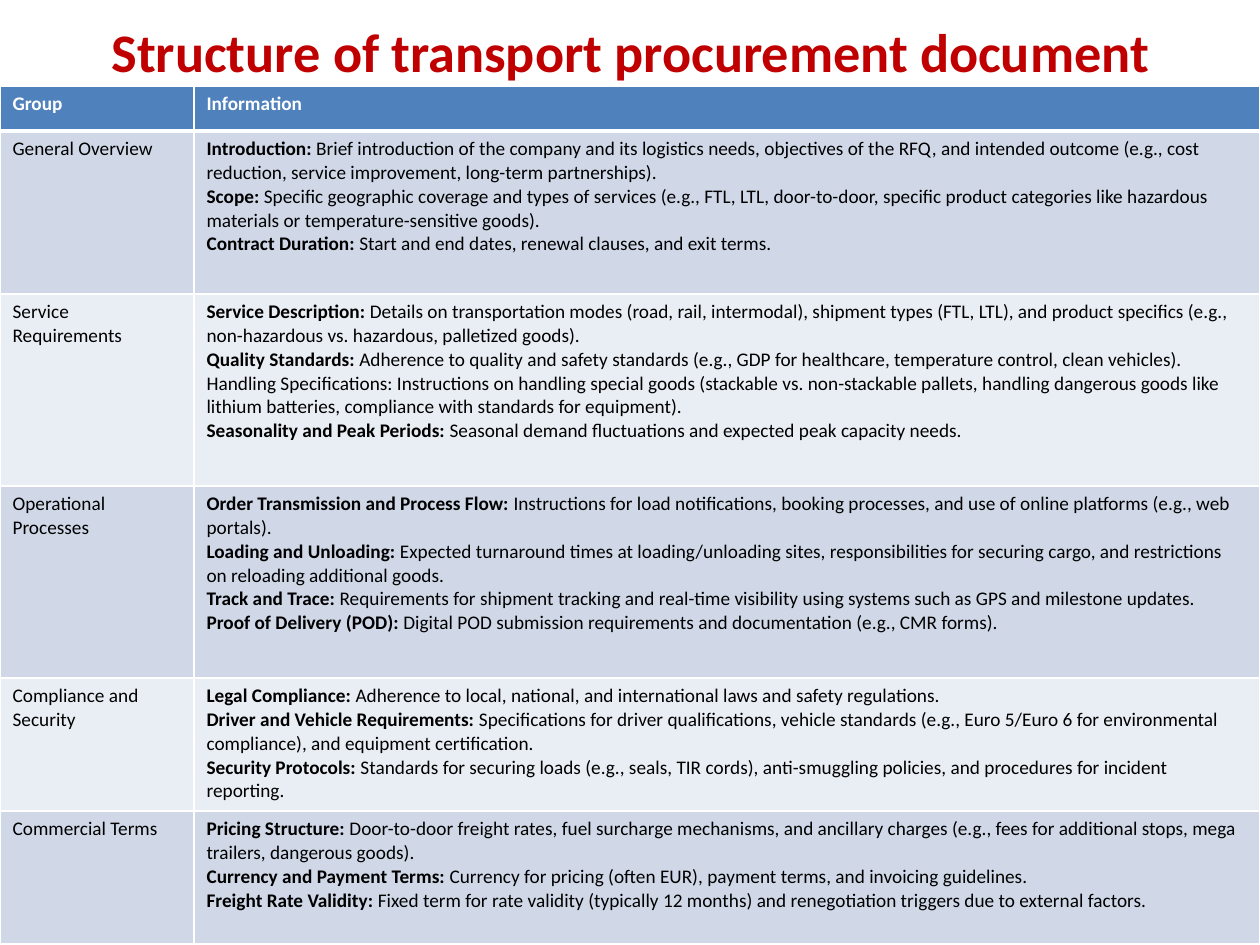
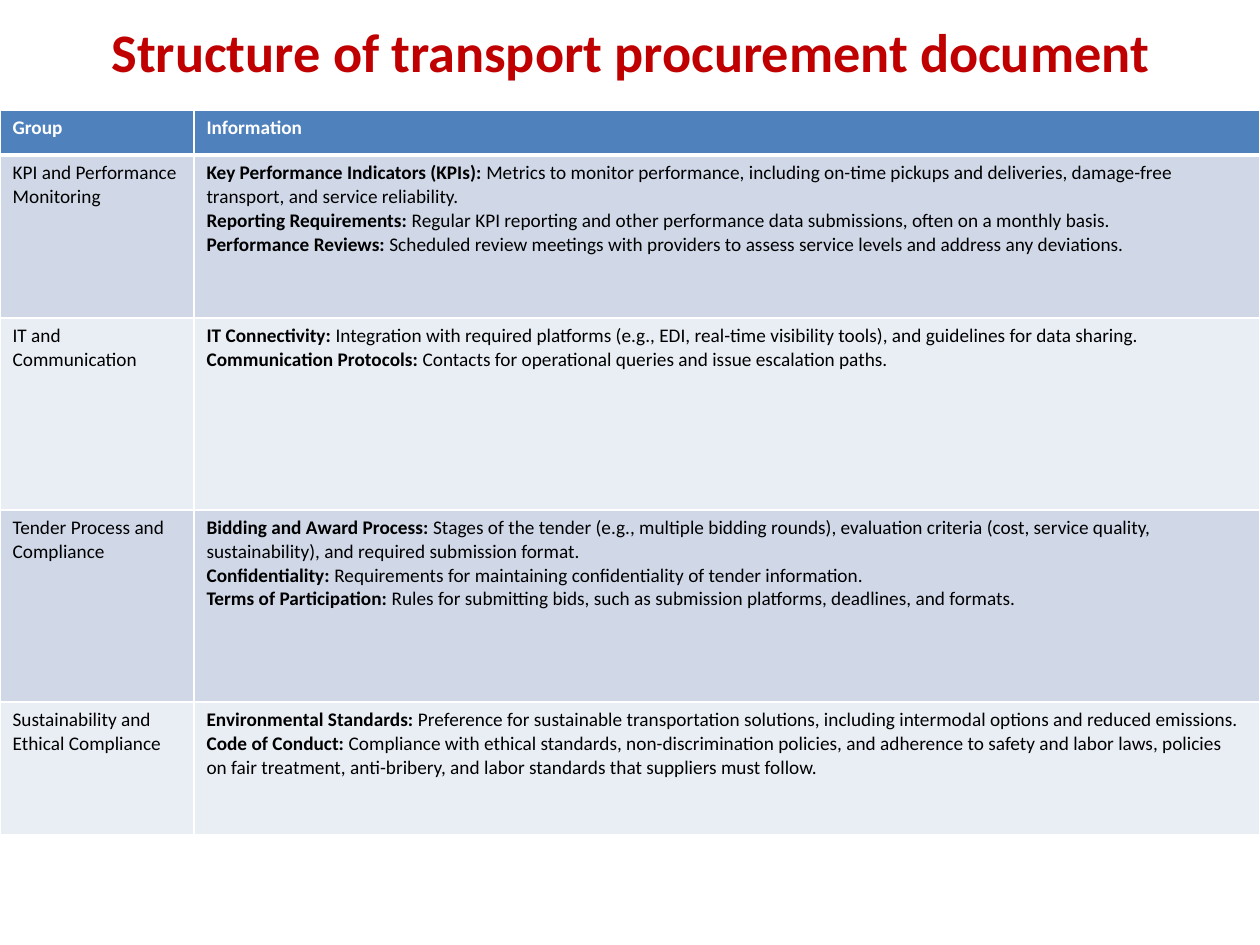
"""Build two slides that tabulate the structure of a transport procurement document."""
from dataclasses import dataclass

from lxml import etree
from pptx import Presentation
from pptx import util as u
from pptx.dml.color import RGBColor
from pptx.enum import text
from pptx.oxml.ns import qn

PX_PER_INCH = 126
SLIDE_WIDTH, SLIDE_HEIGHT = 1260, 945
GROUP_WIDTH = 194
HEADER_HEIGHT = 45
TITLE = "Structure of transport procurement document"
HEADINGS = ("Group", "Information")


@dataclass(frozen=True)
class Theme:
    """Colours, font and type sizes."""
    font: str = "Calibri"
    title_color: str = "C00000"
    header_fill: str = "4F81BD"
    header_text: str = "FFFFFF"
    body_text: str = "000000"
    border: str = "FFFFFF"
    bands: tuple = ("D0D8E8", "E9EDF4")
    title_size: int = 31
    table_size: int = 11
    thin: int = 1
    thick: int = 3


OVERVIEW = [
    ("General Overview", 163, [
        ("Introduction: ", "Brief introduction of the company and its logistics needs, objectives of the RFQ, "
         "and intended outcome (e.g., cost reduction, service improvement, long-term partnerships)."),
        ("Scope: ", "Specific geographic coverage and types of services (e.g., FTL, LTL, door-to-door, "
         "specific product categories like hazardous materials or temperature-sensitive goods)."),
        ("Contract Duration: ", "Start and end dates, renewal clauses, and exit terms."),
    ]),
    ("Service Requirements", 192, [
        ("Service Description: ", "Details on transportation modes (road, rail, intermodal), shipment types "
         "(FTL, LTL), and product specifics (e.g., non-hazardous vs. hazardous, palletized goods)."),
        ("Quality Standards: ", "Adherence to quality and safety standards (e.g., GDP for healthcare, "
         "temperature control, clean vehicles)."),
        ("", "Handling Specifications: Instructions on handling special goods (stackable vs. non-stackable "
         "pallets, handling dangerous goods like lithium batteries, compliance with standards for equipment)."),
        ("Seasonality and Peak Periods: ", "Seasonal demand fluctuations and expected peak capacity needs."),
    ]),
    ("Operational Processes", 192, [
        ("Order Transmission and Process Flow: ", "Instructions for load notifications, booking processes, "
         "and use of online platforms (e.g., web portals)."),
        ("Loading and Unloading: ", "Expected turnaround times at loading/unloading sites, responsibilities "
         "for securing cargo, and restrictions on reloading additional goods."),
        ("Track and Trace: ", "Requirements for shipment tracking and real-time visibility using systems "
         "such as GPS and milestone updates."),
        ("Proof of Delivery (POD): ", "Digital POD submission requirements and documentation "
         "(e.g., CMR forms)."),
    ]),
    ("Compliance and Security", 133, [
        ("Legal Compliance: ", "Adherence to local, national, and international laws and safety regulations."),
        ("Driver and Vehicle Requirements: ", "Specifications for driver qualifications, vehicle standards "
         "(e.g., Euro 5/Euro 6 for environmental compliance), and equipment certification."),
        ("Security Protocols: ", "Standards for securing loads (e.g., seals, TIR cords), anti-smuggling "
         "policies, and procedures for incident reporting."),
    ]),
    ("Commercial Terms", 133, [
        ("Pricing Structure: ", "Door-to-door freight rates, fuel surcharge mechanisms, and ancillary charges "
         "(e.g., fees for additional stops, mega trailers, dangerous goods)."),
        ("Currency and Payment Terms: ", "Currency for pricing (often EUR), payment terms, and invoicing "
         "guidelines."),
        ("Freight Rate Validity: ", "Fixed term for rate validity (typically 12 months) and renegotiation "
         "triggers due to external factors."),
    ]),
]

GOVERNANCE = [
    ("KPI and Performance Monitoring", 163, [
        ("Key Performance Indicators (KPIs): ", "Metrics to monitor performance, including on-time pickups "
         "and deliveries, damage-free transport, and service reliability."),
        ("Reporting Requirements: ", "Regular KPI reporting and other performance data submissions, often on "
         "a monthly basis."),
        ("Performance Reviews: ", "Scheduled review meetings with providers to assess service levels and "
         "address any deviations."),
    ]),
    ("IT and Communication", 192, [
        ("IT Connectivity: ", "Integration with required platforms (e.g., EDI, real-time visibility tools), "
         "and guidelines for data sharing."),
        ("Communication Protocols: ", "Contacts for operational queries and issue escalation paths."),
    ]),
    ("Tender Process and Compliance", 192, [
        ("Bidding and Award Process: ", "Stages of the tender (e.g., multiple bidding rounds), evaluation "
         "criteria (cost, service quality, sustainability), and required submission format."),
        ("Confidentiality: ", "Requirements for maintaining confidentiality of tender information."),
        ("Terms of Participation: ", "Rules for submitting bids, such as submission platforms, deadlines, "
         "and formats."),
    ]),
    ("Sustainability and Ethical Compliance", 133, [
        ("Environmental Standards: ", "Preference for sustainable transportation solutions, including "
         "intermodal options and reduced emissions."),
        ("Code of Conduct: ", "Compliance with ethical standards, non-discrimination policies, and adherence "
         "to safety and labor laws, policies on fair treatment, anti-bribery, and labor standards that "
         "suppliers must follow."),
    ]),
]


def px(length):
    """Turn pixels into EMU."""
    return u.Emu(round(length * u.Inches(1) / PX_PER_INCH))


class Deck:
    """Hold the theme and the current slide, and draw its elements."""

    def __init__(self, theme):
        """Open an empty presentation."""
        self.theme = theme
        self.presentation = Presentation()
        self.presentation.slide_width = px(SLIDE_WIDTH)
        self.presentation.slide_height = px(SLIDE_HEIGHT)
        self.slide = None

    def new_slide(self):
        """Start a blank slide."""
        self.slide = self.presentation.slides.add_slide(self.presentation.slide_layouts[6])

    def style(self, run, size, color, bold):
        """Format one run."""
        run.font.name = self.theme.font
        run.font.size = u.Pt(size)
        run.font.bold = bold
        run.font.color.rgb = RGBColor.from_string(color)

    def title(self, wording):
        """Place the slide title."""
        heading = self.slide.shapes.add_textbox(px(63), px(1), px(1134), px(100)).text_frame
        heading.word_wrap = True
        heading.vertical_anchor = text.MSO_ANCHOR.MIDDLE
        heading.text = wording
        line = heading.paragraphs[0]
        line.alignment = text.PP_ALIGN.CENTER
        self.style(line.runs[0], self.theme.title_size, self.theme.title_color, True)

    def borders(self, cell, top, bottom):
        """Draw the four borders of a cell."""
        properties = cell._tc.get_or_add_tcPr()
        widths = {"lnL": self.theme.thin, "lnR": self.theme.thin, "lnT": top, "lnB": bottom}
        for side, width in widths.items():
            border = etree.SubElement(properties, qn(f"a:{side}"), w=str(u.Pt(width)))
            fill = etree.SubElement(border, qn("a:solidFill"))
            etree.SubElement(fill, qn("a:srgbClr"), val=self.theme.border)

    def cell(self, cell, entries, fill, color, top, bottom):
        """Fill a cell with paragraphs of a bold label and a plain detail."""
        self.borders(cell, top, bottom)
        cell.fill.solid()
        cell.fill.fore_color.rgb = RGBColor.from_string(fill)
        frame = cell.text_frame
        for index, (label, detail) in enumerate(entries):
            line = frame.paragraphs[0] if index == 0 else frame.add_paragraph()
            for wording, bold in ((label, True), (detail, False)):
                if wording:
                    run = line.add_run()
                    run.text = wording
                    self.style(run, self.theme.table_size, color, bold)

    def table(self, top, groups):
        """Draw the header row and one banded row per group."""
        look = self.theme
        heights = [HEADER_HEIGHT] + [height for _, height, _ in groups]
        grid = self.slide.shapes.add_table(
            len(heights), len(HEADINGS), 0, px(top), px(SLIDE_WIDTH), px(sum(heights))).table
        grid.horz_banding = False
        for column, width in zip(grid.columns, (GROUP_WIDTH, SLIDE_WIDTH - GROUP_WIDTH)):
            column.width = px(width)
        for row, height in zip(grid.rows, heights):
            row.height = px(height)
        for column, heading in enumerate(HEADINGS):
            self.cell(grid.cell(0, column), [(heading, "")], look.header_fill, look.header_text,
                      look.thin, look.thick)
        for row, (group, _, details) in enumerate(groups, start=1):
            band = look.bands[(row - 1) % len(look.bands)]
            upper = look.thick if row == 1 else look.thin
            for column, entries in enumerate(([("", group)], details)):
                self.cell(grid.cell(row, column), entries, band, look.body_text, upper, look.thin)


def main():
    """Build and save the slides."""
    deck = Deck(Theme())
    for table_top, groups in ((86, OVERVIEW), (110, GOVERNANCE)):
        deck.new_slide()
        deck.title(TITLE)
        deck.table(table_top, groups)
    deck.presentation.save("out.pptx")


if __name__ == "__main__":
    main()
